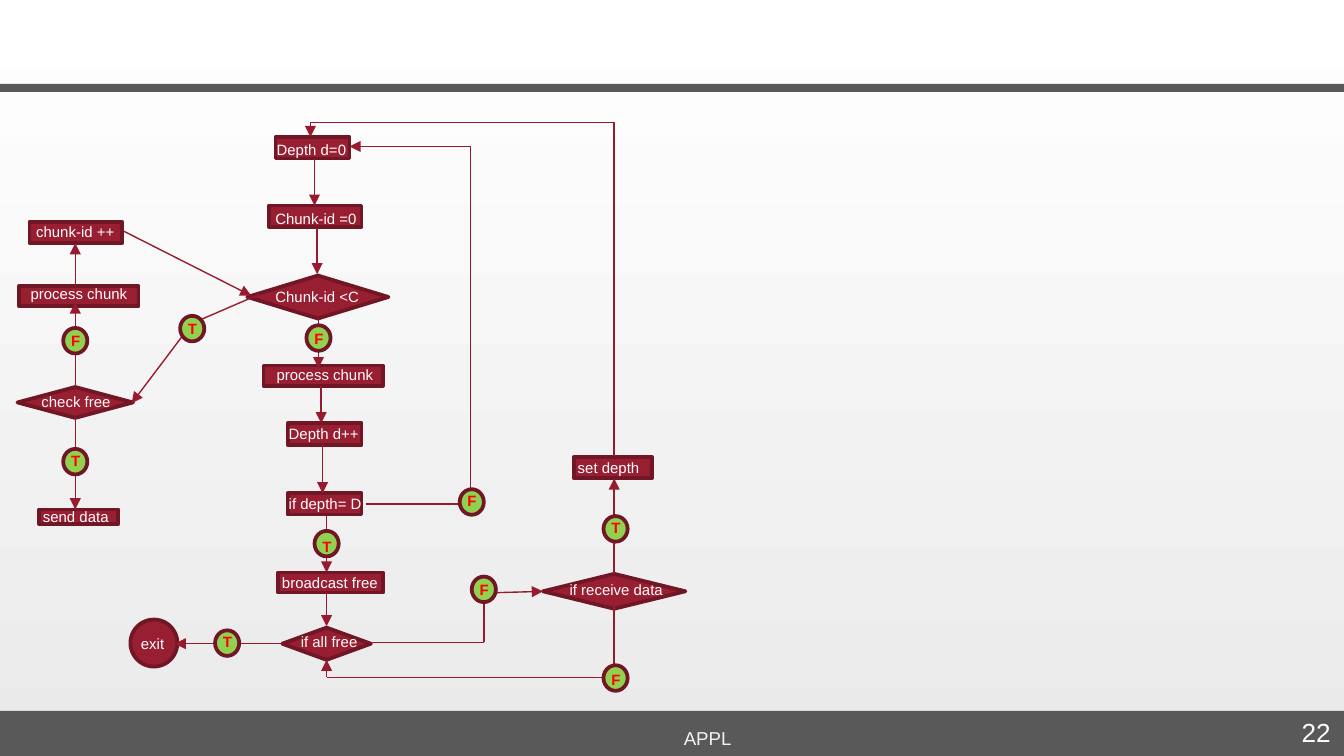
from pptx import Presentation
from pptx.dml.color import RGBColor
from pptx.enum.shapes import MSO_CONNECTOR, MSO_SHAPE
from pptx.enum.text import MSO_ANCHOR, MSO_AUTO_SIZE, PP_ALIGN
from pptx.oxml.ns import qn
from pptx.util import Emu, Inches, Pt
from lxml import etree

RECT = MSO_SHAPE.RECTANGLE
DIAMOND = MSO_SHAPE.DIAMOND
OVAL = MSO_SHAPE.OVAL
STRAIGHT = MSO_CONNECTOR.STRAIGHT
LEFT, CENTER, RIGHT = PP_ALIGN.LEFT, PP_ALIGN.CENTER, PP_ALIGN.RIGHT
TOP, BOTTOM = MSO_ANCHOR.TOP, MSO_ANCHOR.BOTTOM
GROW = MSO_AUTO_SIZE.SHAPE_TO_FIT_TEXT

CRIMSON = RGBColor(0x98, 0x1E, 0x32)
MAROON = RGBColor(0x70, 0x16, 0x25)
FLOW = RGBColor(0x98, 0x1A, 0x2F)
GREEN = RGBColor(0x92, 0xD0, 0x50)
RED = RGBColor(0xFF, 0x00, 0x00)
WHITE = RGBColor(0xFF, 0xFF, 0xFF)
PALE = RGBColor(0xF2, 0xF2, 0xF2)
SILVER = RGBColor(0xEA, 0xEA, 0xEA)
GRAY = RGBColor(0x59, 0x59, 0x59)

COLUMNS, ROWS = 100, 56.25
CELL = Inches(10) / COLUMNS
LABEL_ROWS = 2.4
BADGE_SIZE = (1.8, 1.9)
BADGE_LABEL_SIZE = (4.8, 5.4)

# kind, (left, top, width, height), label, (label left, label top, label width)
STEPS = [
    (RECT, (20.5, 10.2, 5.5, 1.6), "Depth d=0", (19.6, 10, 19.3)),
    (RECT, (20, 15.3, 6.9, 1.6), "Chunk-id =0", (19.5, 15.1, 19.3)),
    (DIAMOND, (18.4, 20.5, 10.5, 3.2), "Chunk-id <C", (19.5, 20.9, 10.1)),
    (RECT, (19.6, 27.2, 8.9, 1.5), "process chunk", (19.6, 26.7, 19.3)),
    (RECT, (21.4, 31.5, 5.5, 1.6), "Depth d++", (20.5, 31.1, 19.3)),
    (RECT, (21.4, 36.7, 5.5, 1.6), "if depth= D", (20.5, 36.3, 19.3)),
    (RECT, (20.7, 42.6, 7.8, 1.5), "broadcast free", (20, 42.2, 14.4)),
    (DIAMOND, (21, 46.7, 6.6, 2.4), "if all free", (21.4, 46.6, 11.7)),
    (OVAL, (9.7, 46.1, 3.5, 3.5), "exit", (9.5, 46.7, 9.2)),
    (RECT, (2.2, 16.5, 6.9, 1.6), "chunk-id ++", (1.7, 16.1, 10.1)),
    (RECT, (1.4, 21.3, 8.9, 1.5), "process chunk", (1.3, 20.7, 19.3)),
    (DIAMOND, (1.3, 28.8, 8.6, 2.3), "check free", (2.1, 28.7, 19.3)),
    (RECT, (2.9, 37.9, 5.9, 1.1), "send data", (2.2, 37.3, 9.8)),
    (DIAMOND, (40.4, 42.7, 10.6, 2.6), "if receive data", (41.4, 42.7, 22.4)),
    (RECT, (42.7, 34, 5.8, 1.6), "set depth", (42, 33.6, 14.9)),
]

ARROWS = [
    [(23.4, 11.8), (23.4, 15.3)],
    [(23.6, 17), (23.6, 20.4)],
    [(23.7, 23.7), (23.7, 27.4)],
    [(23.9, 28.7), (23.9, 31.5)],
    [(24, 32.8), (24, 36.7)],
    [(24.3, 38.3), (24.3, 42.6)],
    [(24.3, 44.1), (24.3, 46.6)],
    [(13.5, 25.1), (9.8, 30)],
    [(5.6, 28.8), (5.6, 22.5)],
    [(5.6, 21.3), (5.6, 18.1)],
    [(5.6, 35.3), (5.6, 37.9)],
    [(9.2, 17.2), (18.7, 22)],
    [(35, 36.3), (35, 10.9), (26, 10.9)],
    [(16, 47.9), (13, 47.9)],
    [(36.9, 44.1), (40.4, 44)],
    [(45.7, 38.3), (45.7, 35.6)],
    [(45.7, 33.9), (45.7, 9.1), (23.1, 9.1), (23.1, 10.2)],
    [(44.8, 50.4), (24.3, 50.4), (24.3, 49.1)],
]

PLAIN_LINES = [
    [(19.3, 21.9), (14.9, 23.8)],
    [(27.2, 37.5), (34.4, 37.5)],
    [(5.6, 31.1), (5.6, 33.4)],
    [(21, 47.9), (17.8, 47.9)],
    [(27.6, 47.8), (36, 47.8), (36, 44.9)],
    [(45.7, 42.7), (45.7, 40.3)],
    [(45.7, 44.9), (45.7, 49.5)],
]

# letter, left, top, label rise above the badge
BADGES = [
    ("T", 13.4, 23.5, 0.2),
    ("F", 22.8, 24.2, 0.2),
    ("F", 4.7, 24.4, 0.2),
    ("T", 4.7, 33.4, 0.3),
    ("T", 23.4, 39.5, 0),
    ("F", 34.2, 36.4, 0.3),
    ("T", 16, 46.9, 0.3),
    ("F", 35.1, 42.9, 0.2),
    ("T", 44.9, 38.4, 0.3),
    ("F", 44.9, 49.5, 0.1),
]


def cells(*counts):
    return [Emu(round(count * CELL)) for count in counts]


def add_block(slide, kind, box, fill, outline=None):
    block = slide.shapes.add_shape(kind, *cells(*box))
    block.shadow.inherit = False
    block.fill.solid()
    block.fill.fore_color.rgb = fill
    if outline is None:
        block.line.fill.background()
    else:
        block.line.color.rgb = outline
        block.line.width = Pt(2)


def add_label(slide, box, words, color=WHITE, size=8, bold=False,
              align=LEFT, anchor=TOP, fit=GROW):
    frame = slide.shapes.add_textbox(*cells(*box)).text_frame
    frame.word_wrap = True
    frame.auto_size = fit
    frame.vertical_anchor = anchor
    frame.text = words
    paragraph = frame.paragraphs[0]
    paragraph.alignment = align
    font = paragraph.runs[0].font
    font.name = "Arial"
    font.size = Pt(size)
    font.bold = bold
    font.color.rgb = color


def add_route(slide, points, arrow):
    for start, end in zip(points, points[1:]):
        segment = slide.shapes.add_connector(STRAIGHT, *cells(*start, *end))
        segment.line.color.rgb = FLOW
        segment.line.width = Pt(0.75)
        outline = segment.line._get_or_add_ln()
        etree.SubElement(outline.getparent(), qn("a:effectLst"))
    if arrow:
        head = etree.SubElement(outline, qn("a:tailEnd"))
        head.set("type", "triangle")


def add_badge(slide, letter, left, top, rise):
    add_block(slide, OVAL, (left, top, *BADGE_SIZE), GREEN, MAROON)
    add_label(slide, (left - 0.4, top - rise, *BADGE_LABEL_SIZE),
              letter, RED, bold=True)


def add_frame(slide):
    background = slide.background.fill
    background.gradient()
    background.gradient_angle = 90
    for stop, color in zip(background.gradient_stops, (SILVER, WHITE)):
        stop.color.rgb = color
    add_block(slide, RECT, (0, 52.9, COLUMNS, ROWS - 52.9), GRAY)
    add_block(slide, RECT, (0, 6.25, COLUMNS, 0.6), GRAY)
    add_label(slide, (19, 52.85, 67.3, 3.4), "APPL", PALE, 10,
              align=CENTER, anchor=BOTTOM, fit=None)
    add_label(slide, (86.4, 52.85, 13.6, 3.4), "22", size=14,
              align=RIGHT, fit=None)


def main():
    deck = Presentation()
    deck.slide_width, deck.slide_height = cells(COLUMNS, ROWS)
    slide = deck.slides.add_slide(deck.slide_layouts[6])
    add_frame(slide)
    for kind, box, words, (left, top, width) in STEPS:
        add_block(slide, kind, box, CRIMSON, MAROON)
        add_label(slide, (left, top, width, LABEL_ROWS), words)
    for points in ARROWS:
        add_route(slide, points, True)
    for points in PLAIN_LINES:
        add_route(slide, points, False)
    for badge in BADGES:
        add_badge(slide, *badge)
    deck.save("out.pptx")


if __name__ == "__main__":
    main()
